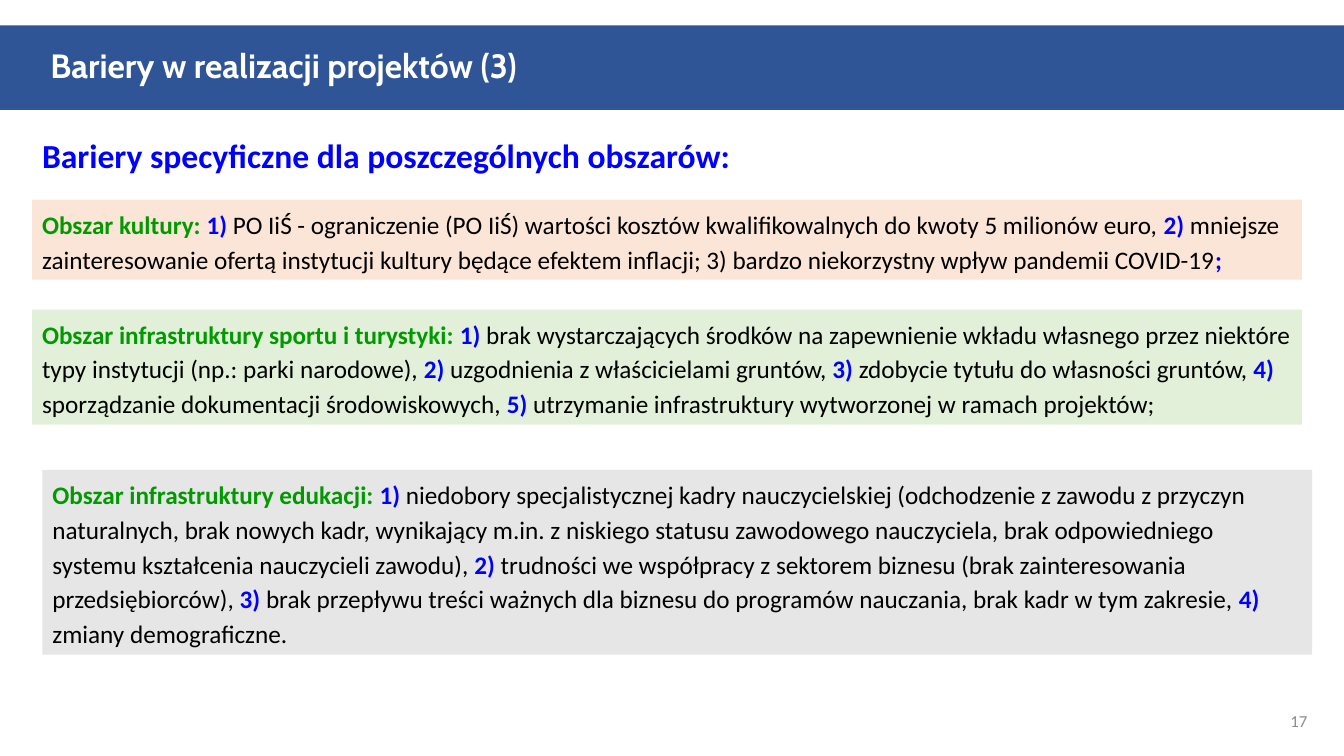
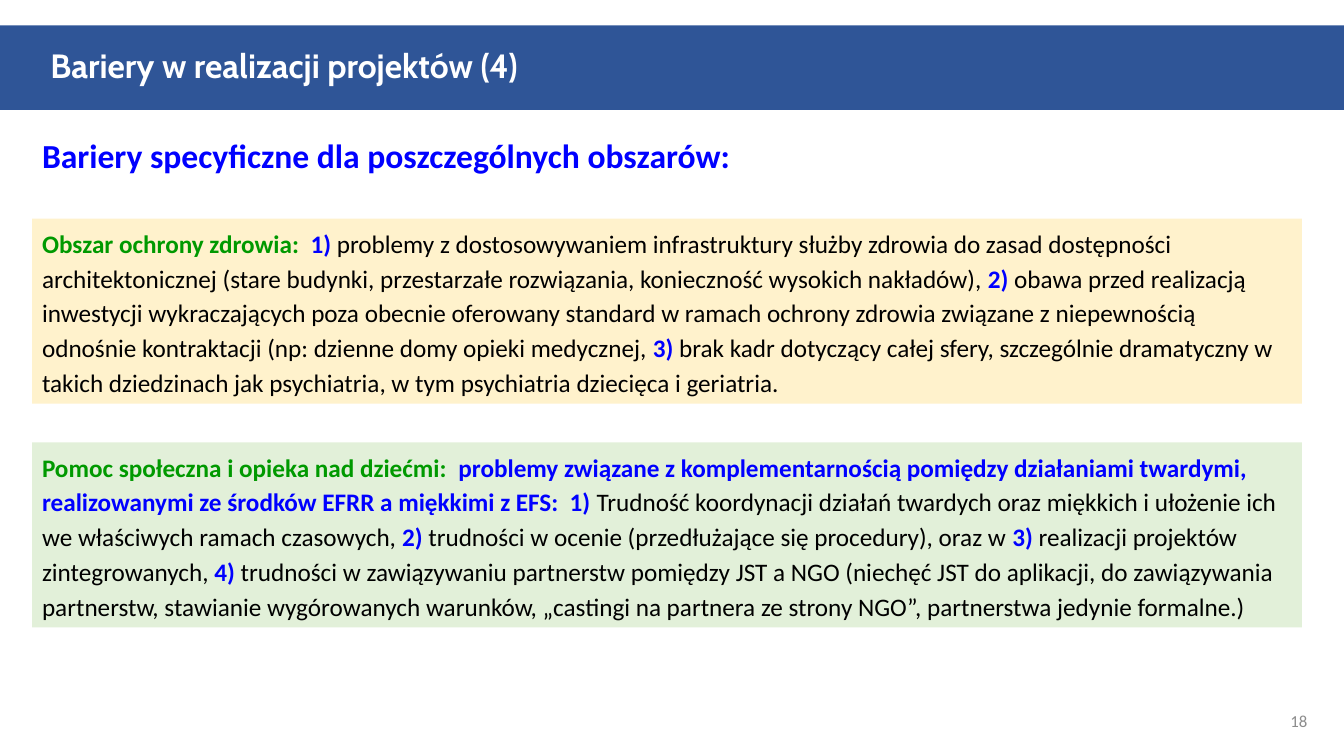
from itertools import cycle

from pptx import Presentation
from pptx.dml.color import RGBColor
from pptx.enum.shapes import MSO_SHAPE
from pptx.enum.text import MSO_ANCHOR, MSO_AUTO_SIZE, PP_ALIGN
from pptx.util import Cm, Pt

NAVY = RGBColor(0x2F, 0x55, 0x97)
WHITE = RGBColor(0xFF, 0xFF, 0xFF)
BLACK = RGBColor(0x00, 0x00, 0x00)
GRAY = RGBColor(0x8C, 0x8C, 0x8C)
BLUE = RGBColor(0x00, 0x00, 0xFF)
GREEN = RGBColor(0x00, 0x99, 0x00)
PEACH = RGBColor(0xFB, 0xE5, 0xD6)
MINT = RGBColor(0xE2, 0xF0, 0xD9)
SILVER = RGBColor(0xE7, 0xE6, 0xE6)
CREAM = RGBColor(0xFF, 0xF2, 0xCC)

WIDTH, HEIGHT = 33.87, 19.05
LEFT, TEXT_WIDTH = 0.81, 32
LINE_HEIGHT, PADDING = 0.88, 0.26

TITLE = {"name": "Cabin", "size": Pt(24), "bold": True}
HEADING = {"name": "Calibri", "size": Pt(24), "bold": True}
STRONG = {"name": "Calibri", "size": Pt(18), "bold": True}
BODY = {"name": "Calibri", "size": Pt(18), "bold": False}
NUMBER = {"name": "Calibri", "size": Pt(12)}

PANEL_TEXT = {"line_spacing": 1.15, "space_after": Pt(6)}


class Deck:
    def __init__(self):
        self.prs = Presentation()
        self.prs.slide_width = Cm(WIDTH)
        self.prs.slide_height = Cm(HEIGHT)
        self.s = None

    def add_slide(self, title, number):
        self.s = self.prs.slides.add_slide(self.prs.slide_layouts[6])
        self.title_band(title)
        self.page_number(number)
        self.heading("Bariery specyficzne dla poszczególnych obszarów:")

    def rect(self, x, y, w, h, color):
        sp = self.s.shapes.add_shape(MSO_SHAPE.RECTANGLE, Cm(x), Cm(y), Cm(w), Cm(h))
        sp.shadow.inherit = False
        sp.fill.solid()
        sp.fill.fore_color.rgb = color
        sp.line.fill.background()
        return sp

    def textbox(self, x, y, w, h):
        return self.s.shapes.add_textbox(Cm(x), Cm(y), Cm(w), Cm(h))

    def set_text(self, sp, runs, anchor=MSO_ANCHOR.TOP, **paragraph):
        """Fill sp with one paragraph of (text, font values, colour) runs."""
        tf = sp.text_frame
        tf.word_wrap = True
        tf.vertical_anchor = anchor
        p = tf.paragraphs[0]
        for key, value in ({"alignment": PP_ALIGN.LEFT} | paragraph).items():
            setattr(p, key, value)
        for text, font, color in runs:
            r = p.add_run()
            r.text = text
            for key, value in font.items():
                setattr(r.font, key, value)
            r.font.color.rgb = color
        return tf

    def title_band(self, text):
        sp = self.rect(0, 0.64, WIDTH, 2.13, NAVY)
        tf = self.set_text(sp, [(text, TITLE, WHITE)], MSO_ANCHOR.MIDDLE,
                           line_spacing=0.9)
        tf.margin_left = Cm(1.27)

    def page_number(self, number):
        sp = self.textbox(31.55, 17.65, 1.65, 1.02)
        self.set_text(sp, [(str(number), NUMBER, GRAY)], MSO_ANCHOR.MIDDLE,
                      alignment=PP_ALIGN.RIGHT)

    def heading(self, text):
        sp = self.textbox(LEFT, 3.12, TEXT_WIDTH, 1.45)
        self.set_text(sp, [(text, HEADING, BLUE)], **PANEL_TEXT)

    def panel(self, y, lines, color, area, *parts, x=LEFT):
        """Area name, then parts that alternate between blue marks and body text."""
        sp = self.rect(x, y, TEXT_WIDTH, lines * LINE_HEIGHT + PADDING, color)
        styles = cycle([(STRONG, BLUE), (BODY, BLACK)])
        runs = [(area, STRONG, GREEN)]
        runs += [(text, *style) for text, style in zip(parts, styles)]
        tf = self.set_text(sp, runs, **PANEL_TEXT)
        tf.auto_size = MSO_AUTO_SIZE.SHAPE_TO_FIT_TEXT


def main():
    deck = Deck()

    deck.add_slide("Bariery w realizacji projektów (3)", 17)
    deck.panel(
        5.03, 2, PEACH, "Obszar kultury: ",
        "1)", " PO IiŚ - ograniczenie (PO IiŚ) wartości kosztów kwalifikowalnych "
        "do kwoty 5 milionów euro, ",
        "2) ", "mniejsze zainteresowanie ofertą instytucji kultury będące efektem "
        "inflacji; 3) bardzo niekorzystny wpływ pandemii COVID-19",
        ";")
    deck.panel(
        7.8, 3, MINT, "Obszar infrastruktury sportu i turystyki: ",
        "1) ", "brak wystarczających środków na zapewnienie wkładu własnego przez "
        "niektóre typy instytucji (np.: parki narodowe), ",
        "2)", " uzgodnienia z właścicielami gruntów, ",
        "3) ", "zdobycie tytułu do własności gruntów, ",
        "4) ", "sporządzanie dokumentacji środowiskowych, ",
        "5) ", "utrzymanie infrastruktury wytworzonej w ramach projektów;")
    deck.panel(
        11.84, 5, SILVER, "Obszar infrastruktury edukacji: ",
        "1) ", "niedobory specjalistycznej kadry nauczycielskiej (odchodzenie z zawodu "
        "z przyczyn naturalnych, brak nowych kadr, wynikający m.in. z niskiego statusu "
        "zawodowego nauczyciela, brak odpowiedniego systemu kształcenia nauczycieli "
        "zawodu), ",
        "2)", " trudności we współpracy z sektorem biznesu (brak zainteresowania "
        "przedsiębiorców), ",
        "3)", " brak przepływu treści ważnych dla biznesu do programów nauczania, "
        "brak kadr w tym zakresie, ",
        "4) ", "zmiany demograficzne.",
        x=1.07)

    deck.add_slide("Bariery w realizacji projektów (4)", 18)
    deck.panel(
        5.51, 5, CREAM, "Obszar ochrony zdrowia:  ",
        "1) ", "problemy z dostosowywaniem infrastruktury służby zdrowia do zasad "
        "dostępności architektonicznej (stare budynki, przestarzałe rozwiązania, "
        "konieczność wysokich nakładów), ",
        "2) ", "obawa przed realizacją inwestycji wykraczających poza obecnie oferowany "
        "standard w ramach ochrony zdrowia związane z niepewnością odnośnie "
        "kontraktacji (np: dzienne domy opieki medycznej, ",
        "3) ", "brak kadr dotyczący całej sfery, szczególnie dramatyczny w takich "
        "dziedzinach jak psychiatria, w tym psychiatria dziecięca i geriatria.")
    deck.panel(
        11.15, 5, MINT, "Pomoc społeczna i opieka nad dziećmi:  ",
        "problemy związane z komplementarnością pomiędzy działaniami twardymi, "
        "realizowanymi ze środków EFRR a miękkimi z EFS:  1) ",
        "Trudność koordynacji działań twardych oraz miękkich i ułożenie ich we "
        "właściwych ramach czasowych, ",
        "2)", " trudności w ocenie (przedłużające się procedury), oraz w ",
        "3) ", "realizacji projektów zintegrowanych, ",
        "4)", " trudności w zawiązywaniu partnerstw pomiędzy JST a NGO (niechęć JST do "
        "aplikacji, do zawiązywania partnerstw, stawianie wygórowanych warunków, "
        "„castingi na partnera ze strony NGO”, partnerstwa jedynie formalne.)")

    deck.prs.save("out.pptx")


if __name__ == "__main__":
    main()
